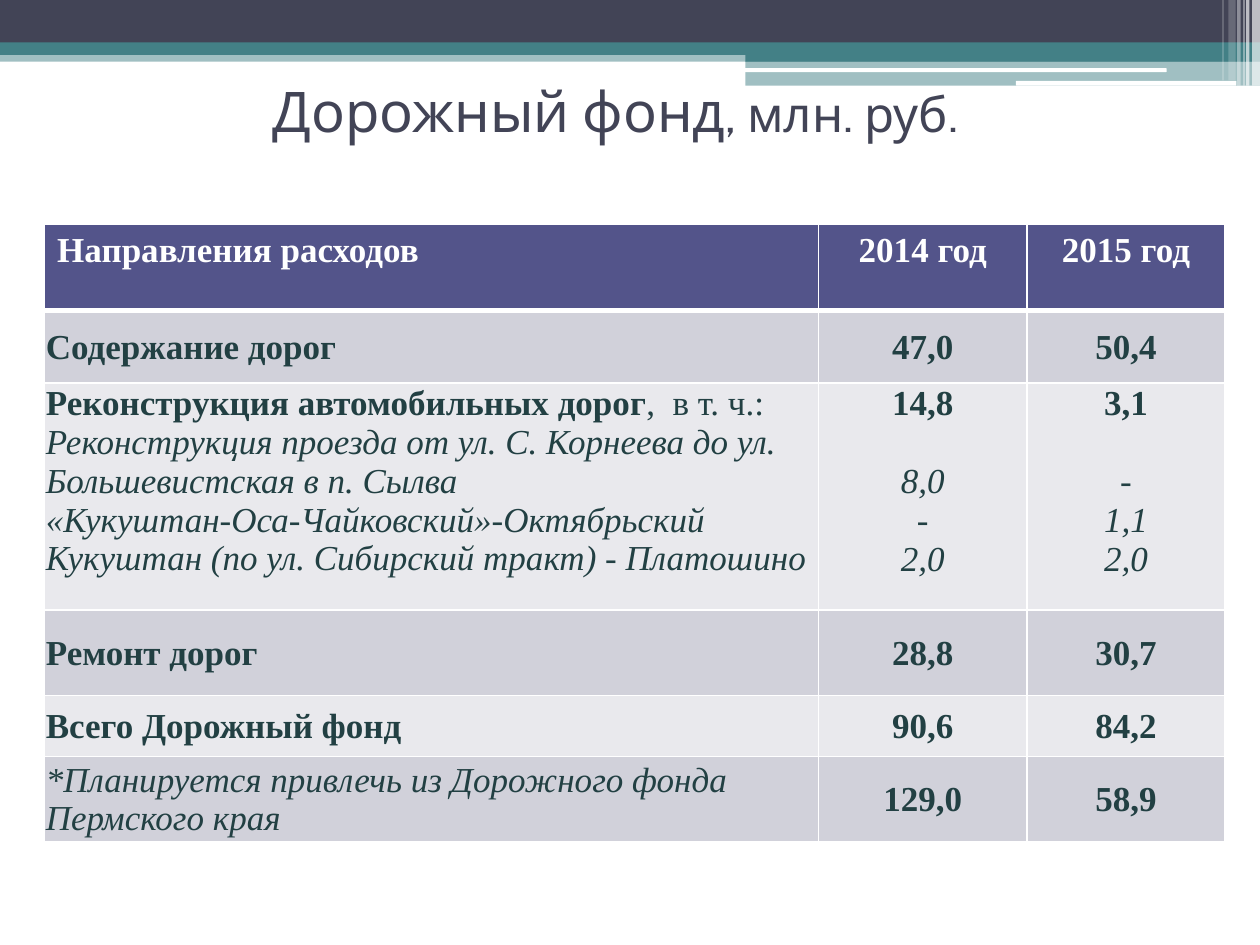
from lxml.etree import SubElement
from pptx import Presentation
from pptx.dml.color import RGBColor
from pptx.enum.shapes import MSO_SHAPE as Shape
from pptx.enum.text import MSO_ANCHOR as Anchor, PP_ALIGN as Align
from pptx.oxml.ns import qn
from pptx.util import Pt

THEME = {
    "dark": "424456", "teal": "438086", "white": "FFFFFF", "header": "53548A",
    "bands": ("D1D1DA", "E9E9ED"), "ink": "224043",
    "title_font": "Cabin", "table_font": "Times New Roman",
    "title_size": 32, "unit_size": 28, "table_size": 20,
}

TITLE = (("Дорожный фонд", THEME["title_size"]), (", млн. руб.", THEME["unit_size"]))

# left, top, width, height, colour, opacity
BARS = (
    (0, 28.8, 720, 6.5, "teal", 50),
    (0, 0, 720, 24.5, "dark", 100),
    (0, 24.2, 720, 7.2, "teal", 100),
    (426, 28, 294, 7.2, "teal", 100),
    (426, 34.8, 294, 14.1, "teal", 50),
)
ROUND_BARS = (
    (425.5, 39, 241.2, 2.2, "white", 100),
    (580.5, 46.2, 126, 2.7, "white", 100),
)
# left, width, height, opacity
STRIPES = (
    (715.5, 4.5, 49, 65), (712, 2, 49, 65), (710.5, 0.7, 49, 60),
    (707, 2, 49, 40), (702, 4.2, 46, 20), (698.5, 0.7, 46, 30),
)

# each cell is a list of paragraphs, each paragraph a list of (text, style)
ROWS = (
    (49, Anchor.TOP, ([[("Направления расходов", "b")]], [[("2014 год", "b")]], [[("2015 год", "b")]])),
    (41.5, Anchor.MIDDLE, ([[("Содержание дорог", "b")]], [[("47,0", "b")]], [[("50,4", "b")]])),
    (129.6, Anchor.TOP, (
        [[("Реконструкция автомобильных дорог", "b"), (",  в т. ч.:", "")],
         [("Реконструкция проезда от ул. С. Корнеева до ул. Большевистская в п. Сылва", "i")],
         [("«Кукуштан-Оса-Чайковский»-Октябрьский", "i")],
         [("Кукуштан (по ул. Сибирский тракт) - Платошино", "i")]],
        [[("14,8", "b")], [("8,0", "i")], [("-", "i")], [("2,0", "i")]],
        [[("3,1", "b")], [("-", "i")], [("1,1", "i")], [("2,0", "i")]])),
    (49, Anchor.MIDDLE, ([[("Ремонт дорог", "b")]], [[("28,8", "b")]], [[("30,7", "b")]])),
    (34.7, Anchor.MIDDLE, ([[("Всего Дорожный фонд", "b")]], [[("90,6", "b")]], [[("84,2", "b")]])),
    (34.7, Anchor.MIDDLE, (
        [[("*Планируется привлечь из Дорожного фонда Пермского края", "i")]],
        [[("129,0", "b")]], [[("58,9", "b")]])),
)
COLUMNS = (442.3, 119, 113.2)
TABLE_LEFT, TABLE_TOP = 25.5, 128.4
LINE_GAP = 22.3


def rgb(name):
    return RGBColor.from_string(THEME.get(name, name))


def add_bar(slide, kind, left, top, width, height, color, opacity):
    s = slide.shapes.add_shape(kind, Pt(left), Pt(top), Pt(width), Pt(height))
    s.shadow.inherit = False
    s.line.fill.background()
    s.fill.solid()
    s.fill.fore_color.rgb = rgb(color)
    if opacity < 100:
        clr = s.fill._xPr.find(f".//{qn('a:srgbClr')}")
        SubElement(clr, qn("a:alpha"), val=str(opacity * 1000))


def add_run(p, text, font, size, color, style=""):
    r = p.add_run()
    r.text = text
    r.font.name, r.font.size = font, Pt(size)
    r.font.bold, r.font.italic = style == "b", style == "i"
    r.font.color.rgb = rgb(color)


def add_title(slide):
    tf = slide.shapes.add_textbox(Pt(14.4), Pt(31.7), Pt(674.6), Pt(62.6)).text_frame
    tf.word_wrap = True
    tf.vertical_anchor = Anchor.MIDDLE
    p = tf.paragraphs[0]
    p.alignment = Align.CENTER
    for text, size in TITLE:
        add_run(p, text, THEME["title_font"], size, "dark")


def set_borders(cell, bottom):
    tc_pr = cell._tc.get_or_add_tcPr()
    widths = {"a:lnL": 1, "a:lnR": 1, "a:lnT": 1, "a:lnB": bottom}
    for i, (tag, width) in enumerate(widths.items()):
        ln = SubElement(tc_pr, qn(tag), w=str(Pt(width)))
        SubElement(SubElement(ln, qn("a:solidFill")), qn("a:srgbClr"), val=THEME["white"])
        tc_pr.insert(i, ln)


def fill_cell(cell, paragraphs, row, col, anchor):
    header = row == 0
    cell.fill.solid()
    cell.fill.fore_color.rgb = rgb("header" if header else THEME["bands"][(row - 1) % 2])
    set_borders(cell, 3 if header else 1)
    cell.vertical_anchor = anchor
    if not header:
        cell.margin_left = cell.margin_right = cell.margin_top = Pt(0.7)
        cell.margin_bottom = Pt(0)
    tf = cell.text_frame
    for i, runs in enumerate(paragraphs):
        p = tf.add_paragraph() if i else tf.paragraphs[0]
        p.alignment = Align.CENTER if col else Align.LEFT
        if col and i == 1:
            p.space_before = Pt(LINE_GAP)
        for text, style in runs:
            add_run(p, text, THEME["table_font"], THEME["table_size"],
                    "white" if header else "ink", style)


def add_budget_table(slide):
    heights = [height for height, _, _ in ROWS]
    table = slide.shapes.add_table(len(ROWS), len(COLUMNS), Pt(TABLE_LEFT), Pt(TABLE_TOP),
                                   Pt(sum(COLUMNS)), Pt(sum(heights))).table
    for col, width in enumerate(COLUMNS):
        table.columns[col].width = Pt(width)
    for row, (height, anchor, cells) in enumerate(ROWS):
        table.rows[row].height = Pt(height)
        for col, paragraphs in enumerate(cells):
            fill_cell(table.cell(row, col), paragraphs, row, col, anchor)


def main():
    """Build the road fund slide: banner, title and spending table."""
    prs = Presentation()
    prs.slide_width, prs.slide_height = Pt(720), Pt(540)
    slide = prs.slides.add_slide(prs.slide_layouts[6])
    for bar in BARS:
        add_bar(slide, Shape.RECTANGLE, *bar)
    for bar in ROUND_BARS:
        add_bar(slide, Shape.ROUNDED_RECTANGLE, *bar)
    for left, width, height, opacity in STRIPES:
        add_bar(slide, Shape.RECTANGLE, left, 0, width, height, "white", opacity)
    add_title(slide)
    add_budget_table(slide)
    prs.save("out.pptx")


if __name__ == "__main__":
    main()
